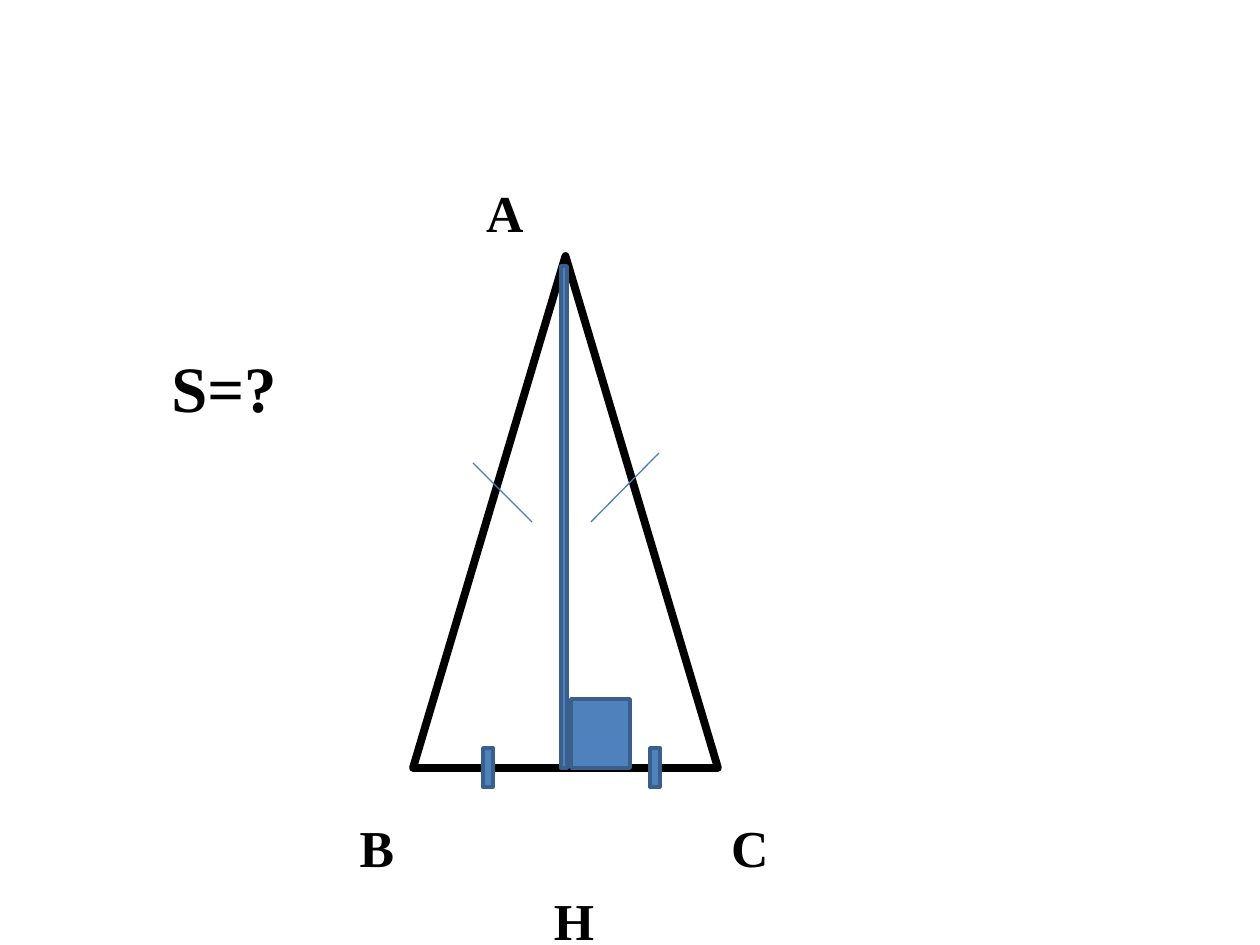
"""Builds the slide with isosceles triangle ABC and its height AH."""
from lxml import etree
from pptx import Presentation
from pptx.dml.color import RGBColor
from pptx.enum.shapes import MSO_CONNECTOR, MSO_SHAPE
from pptx.enum.text import MSO_ANCHOR, PP_ALIGN
from pptx.oxml.ns import qn
from pptx.util import Emu, Pt

PX = 914400 / 126
TRIANGLE, RECTANGLE = MSO_SHAPE.ISOSCELES_TRIANGLE, MSO_SHAPE.RECTANGLE
STRAIGHT = MSO_CONNECTOR.STRAIGHT
MIDDLE, CENTER = MSO_ANCHOR.MIDDLE, PP_ALIGN.CENTER
BLACK = RGBColor(0x00, 0x00, 0x00)
WHITE = RGBColor(0xFF, 0xFF, 0xFF)
BLUE = RGBColor(0x4F, 0x81, 0xBD)
DARK_BLUE = RGBColor(0x3A, 0x5F, 0x8C)
TICK_BLUE = RGBColor(0x4B, 0x7E, 0xBC)


def px(*lengths):
    return [Emu(round(length * PX)) for length in lengths]


def add_figure(slide, kind, box, fill=BLUE, outline=DARK_BLUE, weight=2):
    figure = slide.shapes.add_shape(kind, *px(*box))
    figure.shadow.inherit = False
    figure.fill.solid()
    figure.fill.fore_color.rgb = fill
    figure.line.color.rgb = outline
    figure.line.width = Pt(weight)


def add_tick(slide, ends):
    tick = slide.shapes.add_connector(STRAIGHT, *px(*ends))
    tick.line.color.rgb = TICK_BLUE
    tick.line.width = Pt(0.75)
    etree.SubElement(tick._element.spPr, qn("a:effectLst"))


def add_label(slide, text, center_x, center_y, size=29.6):
    width, height = 140, 50
    label = slide.shapes.add_textbox(
        *px(center_x - width / 2, center_y - height / 2, width, height))
    frame = label.text_frame
    frame.word_wrap = True
    frame.vertical_anchor = MIDDLE
    frame.margin_left = frame.margin_right = 0
    frame.margin_top = frame.margin_bottom = 0
    paragraph = frame.paragraphs[0]
    paragraph.text = text
    paragraph.alignment = CENTER
    paragraph.font.name = "Times New Roman"
    paragraph.font.size = Pt(size)
    paragraph.font.bold = True
    paragraph.font.color.rgb = BLACK


def main():
    prs = Presentation()
    prs.slide_width, prs.slide_height = px(1260, 945)
    slide = prs.slides.add_slide(prs.slide_layouts[6])

    for text, x, y in (("А", 505, 212), ("В", 377, 847),
                       ("C", 750, 847), ("H", 574, 920)):
        add_label(slide, text, x, y)
    add_label(slide, "S=?", 224, 387, size=37)

    add_figure(slide, TRIANGLE, (413, 256, 305, 512), WHITE, BLACK, 4.5)
    for side_tick in ((473, 463, 532, 522), (659, 453, 591, 522)):
        add_tick(slide, side_tick)

    height_bar = (561, 266, 6, 502)
    right_angle = (571, 699, 59, 69)
    base_ticks = [(left, 748, 10, 39) for left in (483, 650)]
    for box in (height_bar, right_angle, *base_ticks):
        add_figure(slide, RECTANGLE, box)

    prs.save("out.pptx")


if __name__ == "__main__":
    main()
